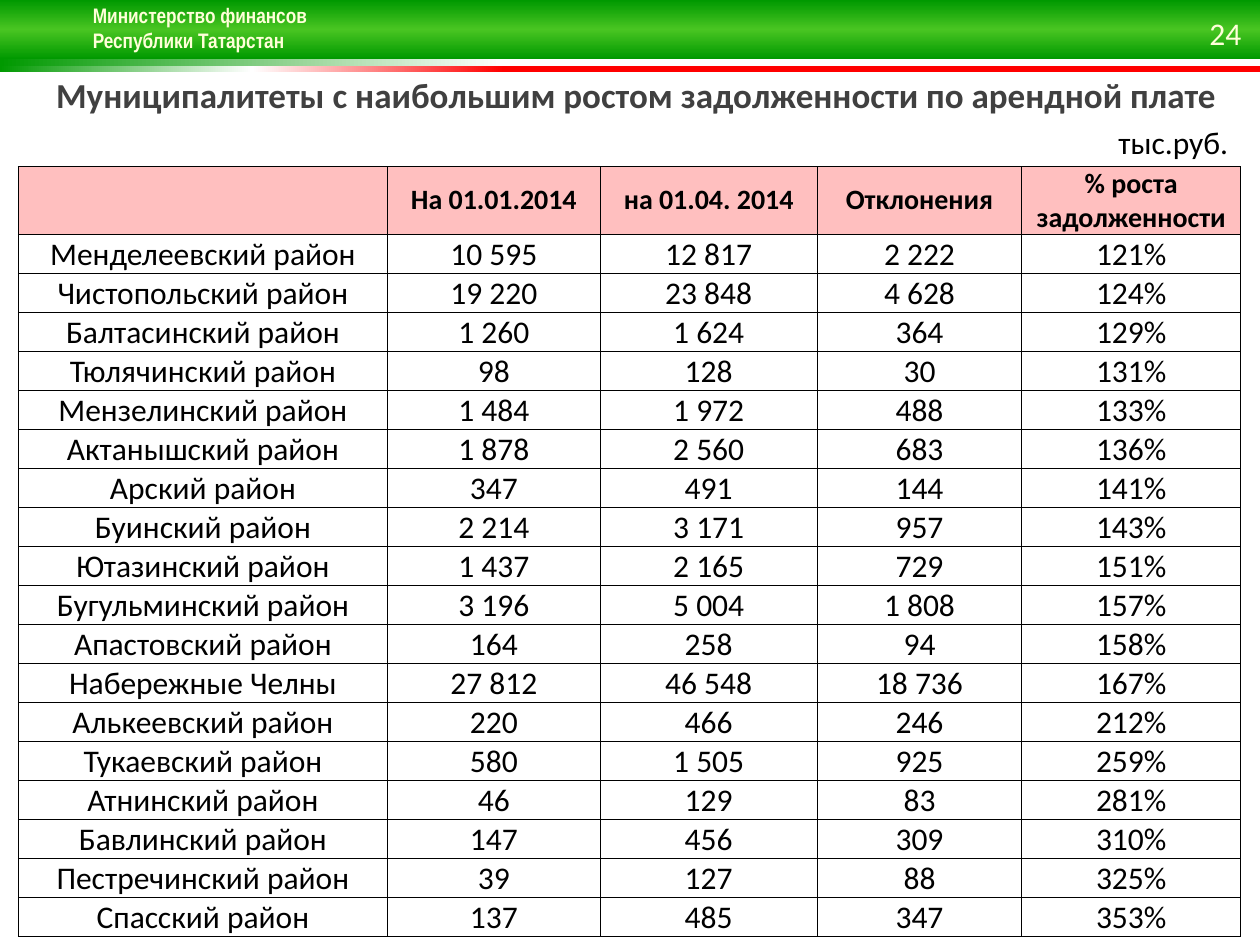
from lxml.etree import SubElement
from pptx import Presentation
from pptx.dml.color import RGBColor
from pptx.enum.shapes import MSO_SHAPE
from pptx.enum.text import MSO_ANCHOR, PP_ALIGN
from pptx.oxml import parse_xml
from pptx.oxml.ns import nsdecls, qn
from pptx.util import Pt

MINISTRY = "Министерство финансов\vРеспублики Татарстан"
TITLE = "Муниципалитеты с наибольшим ростом задолженности по арендной плате"
UNIT = "тыс.руб."
PAGE_NUMBER = "24"
HEADER = ("", "На 01.01.2014", "на 01.04. 2014", "Отклонения", "% роста задолженности")
ROWS = [
    ("Менделеевский район", "10 595", "12 817", "2 222", "121%"),
    ("Чистопольский район", "19 220", "23 848", "4 628", "124%"),
    ("Балтасинский район", "1 260", "1 624", "364", "129%"),
    ("Тюлячинский район", "98", "128", "30", "131%"),
    ("Мензелинский район", "1 484", "1 972", "488", "133%"),
    ("Актанышский район", "1 878", "2 560", "683", "136%"),
    ("Арский район", "347", "491", "144", "141%"),
    ("Буинский район", "2 214", "3 171", "957", "143%"),
    ("Ютазинский район", "1 437", "2 165", "729", "151%"),
    ("Бугульминский район", "3 196", "5 004", "1 808", "157%"),
    ("Апастовский район", "164", "258", "94", "158%"),
    ("Набережные Челны", "27 812", "46 548", "18 736", "167%"),
    ("Алькеевский район", "220", "466", "246", "212%"),
    ("Тукаевский район", "580", "1 505", "925", "259%"),
    ("Атнинский район", "46", "129", "83", "281%"),
    ("Бавлинский район", "147", "456", "309", "310%"),
    ("Пестречинский район", "39", "127", "88", "325%"),
    ("Спасский район", "137", "485", "347", "353%"),
]
COLUMN_WIDTHS = (211, 121.5, 124, 117, 125)
HEADER_HEIGHT, ROW_HEIGHT = 36.75, 21
# top, height, angle, gradient stops
BANDS = [
    (33.8, 3.8, 180, [(0, "FFFFFF"), (60, "FFFFFF"), (100, "009900")]),
    (37.5, 3.8, 180, [(60, "FF0000"), (80, "FFFFFF"), (100, "009900")]),
    (0, 33.8, 90, [(0, "009900"), (50, "49C522"), (100, "009900")]),
]


def color(value):
    return RGBColor.from_string(value)


def style(frame, size, ink, bold=False, font="Calibri", align=PP_ALIGN.LEFT):
    for para in frame.paragraphs:
        para.alignment = align
        for span in para.runs:
            span.font.name, span.font.size, span.font.bold = font, Pt(size), bold
            span.font.color.rgb = color(ink)


def add_band(page, top, height, angle, stops):
    band = page.shapes.add_shape(MSO_SHAPE.RECTANGLE, 0, Pt(top), Pt(720), Pt(height))
    band.shadow.inherit = False
    band.line.fill.background()
    gradient = "".join(f'<a:gs pos="{position * 1000}"><a:srgbClr val="{value}"/></a:gs>'
                       for position, value in stops)
    band._element.spPr.find(qn("a:prstGeom")).addnext(parse_xml(
        f'<a:gradFill {nsdecls("a")} rotWithShape="1"><a:gsLst>{gradient}</a:gsLst>'
        f'<a:lin ang="{angle * 60000}" scaled="0"/></a:gradFill>'))


def add_label(page, text, left, top, width, height, wrap=True, **look):
    box = page.shapes.add_textbox(Pt(left), Pt(top), Pt(width), Pt(height))
    box.text_frame.word_wrap = wrap
    box.text_frame.text = text
    style(box.text_frame, **look)
    return box


def add_text_shadow(box):
    for span in box.text_frame.paragraphs[0].runs:
        span.font._element.find(qn("a:solidFill")).addnext(parse_xml(
            f'<a:effectLst {nsdecls("a")}><a:outerShdw blurRad="38100" dist="38100" '
            'dir="2700000"><a:srgbClr val="000000"/></a:outerShdw></a:effectLst>'))


def add_borders(cell):
    properties = cell._tc.get_or_add_tcPr()
    for index, side in enumerate(("lnL", "lnR", "lnT", "lnB")):
        properties.insert(index, parse_xml(
            f'<a:{side} {nsdecls("a")} w="{Pt(0.5)}"><a:solidFill>'
            f'<a:srgbClr val="000000"/></a:solidFill></a:{side}>'))


def fill_cell(cell, text, is_header):
    cell.text = text
    cell.fill.solid()
    cell.fill.fore_color.rgb = color("FFBFBF" if is_header else "FFFFFF")
    cell.vertical_anchor = MSO_ANCHOR.MIDDLE if is_header else MSO_ANCHOR.BOTTOM
    cell.margin_left = cell.margin_right = Pt(5.75 if is_header else 0.7)
    cell.margin_top = Pt(0 if is_header else 0.7)
    cell.margin_bottom = 0
    style(cell.text_frame, 16 if is_header else 18, "000000", is_header,
          align=PP_ALIGN.CENTER)
    if not text:
        SubElement(cell.text_frame.paragraphs[0]._p, qn("a:endParaRPr"), sz="1600")
    add_borders(cell)


def add_debt_table(page):
    lines = [HEADER, *ROWS]
    table = page.shapes.add_table(
        len(lines), len(HEADER), Pt(10.5), Pt(95.25), Pt(sum(COLUMN_WIDTHS)),
        Pt(HEADER_HEIGHT + ROW_HEIGHT * len(ROWS))).table
    for column, width in zip(table.columns, COLUMN_WIDTHS):
        column.width = Pt(width)
    for r, line in enumerate(lines):
        table.rows[r].height = Pt(ROW_HEIGHT if r else HEADER_HEIGHT)
        for c, text in enumerate(line):
            fill_cell(table.cell(r, c), text, r == 0)


def main():
    deck = Presentation()
    deck.slide_width, deck.slide_height = Pt(720), Pt(540)
    page = deck.slides.add_slide(deck.slide_layouts[6])
    for band in BANDS:
        add_band(page, *band)
    ministry = add_label(page, MINISTRY, 46, -2, 138, 51, size=12, ink="FFFFD9",
                         bold=True, font="Arial Narrow")
    add_text_shadow(ministry)
    title = add_label(page, TITLE, 3.6, 38.5, 713.5, 72, size=20, ink="404040",
                      bold=True, align=PP_ALIGN.CENTER)
    title.text_frame.margin_left = Pt(13.7)
    add_label(page, PAGE_NUMBER, 684, 4.5, 34, 24.5, size=18, ink="FFFFD9")
    add_debt_table(page)
    add_label(page, UNIT, 632, 66.5, 78, 29, wrap=False, size=18, ink="000000")
    deck.save("out.pptx")


if __name__ == "__main__":
    main()
